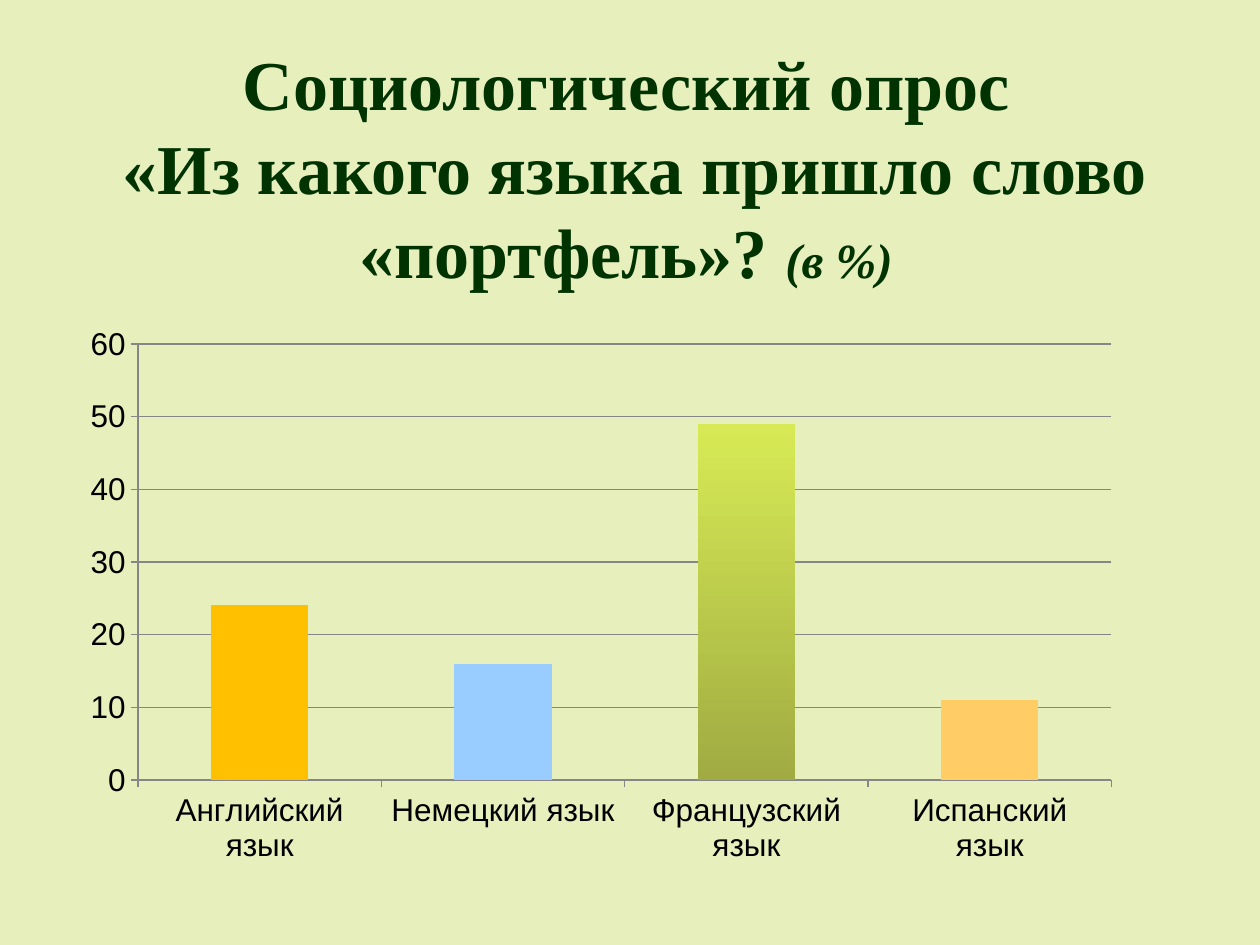
import pptx
import pptx.chart.data
import pptx.dml.color
import pptx.enum.chart
import pptx.enum.text
import pptx.util

Pt = pptx.util.Pt
RGBColor = pptx.dml.color.RGBColor

BACKGROUND = RGBColor(0xE7, 0xEF, 0xBD)
DARK_GREEN = RGBColor(0x00, 0x33, 0x00)
BLACK = RGBColor(0x00, 0x00, 0x00)
GRID_GRAY = RGBColor(0x86, 0x86, 0x86)
AMBER = RGBColor(0xFF, 0xC0, 0x00)
SKY_BLUE = RGBColor(0x99, 0xCC, 0xFF)
LIME = RGBColor(0xD7, 0xEA, 0x55)
OLIVE = RGBColor(0xA0, 0xAC, 0x42)
PEACH = RGBColor(0xFF, 0xCC, 0x66)

prs = pptx.Presentation()
prs.slide_width, prs.slide_height = Pt(720), Pt(540)
slide = prs.slides.add_slide(prs.slide_layouts[5])
slide.background.fill.solid()
slide.background.fill.fore_color.rgb = BACKGROUND

# Title
title = slide.shapes.title
title.left, title.top, title.width, title.height = Pt(33.84), Pt(50.4), Pt(648), Pt(90)
title_frame = title.text_frame
title_frame.word_wrap = True
title_frame.auto_size = pptx.enum.text.MSO_AUTO_SIZE.NONE
title_frame.vertical_anchor = pptx.enum.text.MSO_ANCHOR.MIDDLE
heading = title_frame.paragraphs[0]
heading.alignment = pptx.enum.text.PP_ALIGN.CENTER
for text, size, italic in [
    ("Социологический опрос", 40, False),
    (" «Из какого языка пришло слово «портфель»? ", 40, False),
    ("(в %)", 28, True),
]:
    if heading.runs and size == 40:
        heading.add_line_break()
    run = heading.add_run()
    run.text = text
    run.font.name = "Times New Roman"
    run.font.size = Pt(size)
    run.font.bold = True
    run.font.italic = italic
    run.font.color.rgb = DARK_GREEN

# Survey results
survey = pptx.chart.data.CategoryChartData()
survey.categories = ["Английский язык", "Немецкий язык", "Французский язык", "Испанский язык"]
survey.add_series("Series 1", [24, 16, 49, 11])
chart = slide.shapes.add_chart(
    pptx.enum.chart.XL_CHART_TYPE.COLUMN_CLUSTERED,
    Pt(39.6), Pt(180), Pt(607.68), Pt(319.68), survey,
).chart
chart.has_title = False
chart.has_legend = False
chart.font.name = "Arial"
chart.font.size = Pt(18)
chart.font.color.rgb = BLACK

percent_axis = chart.value_axis
percent_axis.minimum_scale, percent_axis.maximum_scale = 0, 60
percent_axis.major_unit = 10
percent_axis.has_major_gridlines = True
for axis in (chart.category_axis, percent_axis):
    axis.major_tick_mark = pptx.enum.chart.XL_TICK_MARK.OUTSIDE
    axis.format.line.color.rgb = GRID_GRAY
    axis.format.line.width = Pt(0.75)
percent_axis.major_gridlines.format.line.color.rgb = GRID_GRAY
percent_axis.major_gridlines.format.line.width = Pt(0.75)

# Columns
columns = chart.plots[0]
columns.vary_by_categories = False
columns.gap_width = 150
answers = columns.series[0]
answers.invert_if_negative = False
for index, color in enumerate([AMBER, SKY_BLUE, None, PEACH]):
    fill = answers.points[index].format.fill
    if color is None:
        fill.gradient()
        fill.gradient_angle = 270
        for stop, shade, position in zip(fill.gradient_stops, (LIME, OLIVE), (0, 1)):
            stop.color.rgb = shade
            stop.position = position
    else:
        fill.solid()
        fill.fore_color.rgb = color

prs.save("out.pptx")
